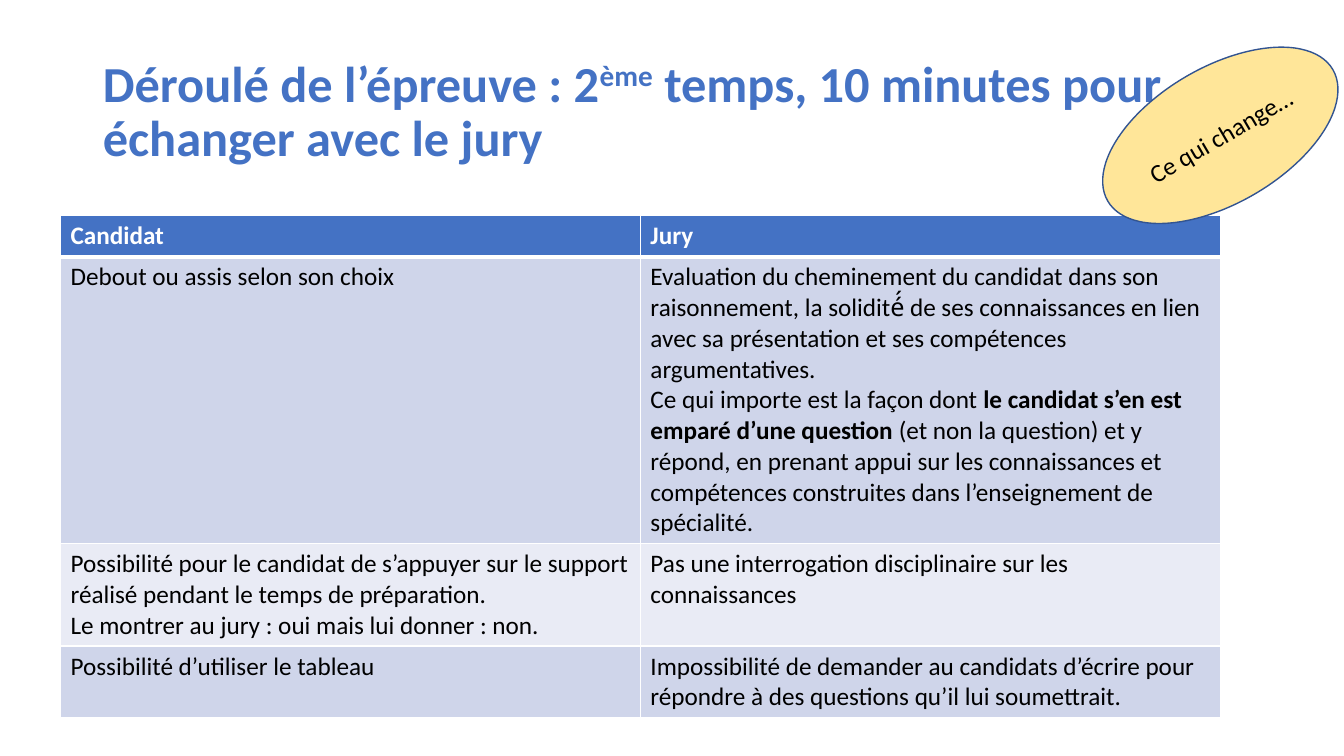
from dataclasses import dataclass

from lxml.etree import SubElement
from pptx import Presentation
from pptx.dml.color import RGBColor
from pptx.enum.shapes import MSO_SHAPE as Shape
from pptx.enum.text import MSO_ANCHOR as Anchor, MSO_AUTO_SIZE as AutoSize, PP_ALIGN as Align
from pptx.oxml.ns import qn
from pptx.util import Inches, Pt

WIDTH, HEIGHT = Inches(13.33), Inches(7.5)


@dataclass(frozen=True)
class Theme:
    font: str = "Calibri"
    title_size: int = 36
    body_size: int = 18
    accent: str = "4472C4"
    bands: tuple = ("CFD5EA", "E9EBF5")
    white: str = "FFFFFF"
    black: str = "000000"
    badge: str = "FFE699"
    badge_line: str = "325491"


THEME = Theme()

TITLE = [("Déroulé de l’épreuve : 2", {}), ("ème", {"superscript": True}),
         (" temps, 10 minutes pour échanger avec le jury", {})]
BADGE = "Ce qui change…"

# Each cell is a list of paragraphs, each paragraph a list of runs.
HEADER = [[[("Candidat", {})]], [[("Jury", {})]]]
BODY = [
    [
        [[("Debout ou assis selon son choix", {})]],
        [[("Evaluation du cheminement du candidat dans son raisonnement, la solidité́ de ses "
           "connaissances en lien avec sa présentation et ses compétences argumentatives.", {})],
         [("Ce qui importe est la façon dont ", {}),
          ("le candidat s’en est emparé d’une question", {"bold": True}),
          (" (et non la question) et y répond, en prenant appui sur les connaissances et "
           "compétences construites dans l’enseignement de spécialité.", {})]],
    ],
    [
        [[("Possibilité pour le candidat de s’appuyer sur le support réalisé pendant le temps "
           "de préparation.", {})],
         [("Le montrer au jury : oui mais lui donner : non.", {})]],
        [[("Pas une interrogation disciplinaire sur les connaissances", {})]],
    ],
    [
        [[("Possibilité d’utiliser le tableau", {})]],
        [[("Impossibilité de demander au candidats d’écrire pour répondre à des questions "
           "qu’il lui soumettrait.", {})]],
    ],
]


def share(left, top, width, height):
    """Turn shares of the slide's size into lengths."""
    return [round(part * whole) for part, whole in
            zip((left, top, width, height), (WIDTH, HEIGHT) * 2)]


def set_format(target, values):
    for name, value in values.items():
        setattr(target, name, value)


def fill_solid(target, colour):
    target.fill.solid()
    target.fill.fore_color.rgb = RGBColor.from_string(colour)


def write_paragraph(paragraph, runs, size, colour, bold=False, **layout):
    set_format(paragraph, layout)
    for text, extra in runs:
        run = paragraph.add_run()
        run.text = text
        values = {"name": THEME.font, "size": Pt(size), "bold": bold, **extra}
        superscript = values.pop("superscript", False)
        set_format(run.font, values)
        run.font.color.rgb = RGBColor.from_string(colour)
        if superscript:
            run.font._element.set("baseline", "30000")


def add_title(slide):
    title = slide.shapes.title
    set_format(title, dict(zip(("left", "top", "width", "height"),
                               share(0.069, 0.053, 0.863, 0.193))))
    set_format(title.text_frame, {"word_wrap": True, "auto_size": AutoSize.NONE,
                                  "vertical_anchor": Anchor.MIDDLE})
    write_paragraph(title.text_frame.paragraphs[0], TITLE, THEME.title_size, THEME.accent,
                    bold=True, alignment=Align.LEFT, line_spacing=0.9)


def add_borders(cell, bottom):
    properties = cell._tc.get_or_add_tcPr()
    for side, width in {"L": 1, "R": 1, "T": 1, "B": bottom}.items():
        line = SubElement(properties, qn(f"a:ln{side}"), w=str(Pt(width)))
        SubElement(SubElement(line, qn("a:solidFill")), qn("a:srgbClr"), val=THEME.white)


def write_cell(cell, paragraphs, fill, colour, bold, bottom):
    add_borders(cell, bottom)
    fill_solid(cell, fill)
    for index, runs in enumerate(paragraphs):
        frame = cell.text_frame
        paragraph = frame.add_paragraph() if index else frame.paragraphs[0]
        write_paragraph(paragraph, runs, THEME.body_size, colour, bold)


def add_comparison(slide):
    rows = [HEADER, *BODY]
    left, top, width, _ = share(0.045, 0.285, 0.863, 0)
    table = slide.shapes.add_table(len(rows), len(HEADER), left, top, width,
                                   Inches(0.41) * len(rows)).table
    for row, contents in enumerate(rows):
        if row == 0:
            style = {"fill": THEME.accent, "colour": THEME.white, "bold": True, "bottom": 3}
        else:
            style = {"fill": THEME.bands[(row - 1) % 2], "colour": THEME.black,
                     "bold": False, "bottom": 1}
        for column, paragraphs in enumerate(contents):
            # The line under the header is shared with the first body row.
            write_cell(table.cell(row, column), paragraphs, **style)
            if row == 1:
                top_line = table.cell(row, column)._tc.tcPr.find(qn("a:lnT"))
                top_line.set("w", str(Pt(3)))


def add_badge(slide):
    badge = slide.shapes.add_shape(Shape.OVAL, *share(0.811, 0.089, 0.194, 0.18))
    badge.rotation = 329.7
    badge.shadow.inherit = False
    fill_solid(badge, THEME.badge)
    badge.line.color.rgb = RGBColor.from_string(THEME.badge_line)
    badge.line.width = Pt(1)
    set_format(badge.text_frame, {"word_wrap": True, "vertical_anchor": Anchor.MIDDLE})
    write_paragraph(badge.text_frame.paragraphs[0], [(BADGE, {})], THEME.body_size,
                    THEME.black, alignment=Align.CENTER)


def main():
    presentation = Presentation()
    set_format(presentation, {"slide_width": WIDTH, "slide_height": HEIGHT})
    slide = presentation.slides.add_slide(presentation.slide_layouts.get_by_name("Title Only"))
    add_title(slide)
    add_comparison(slide)
    add_badge(slide)
    presentation.save("out.pptx")


if __name__ == "__main__":
    main()
